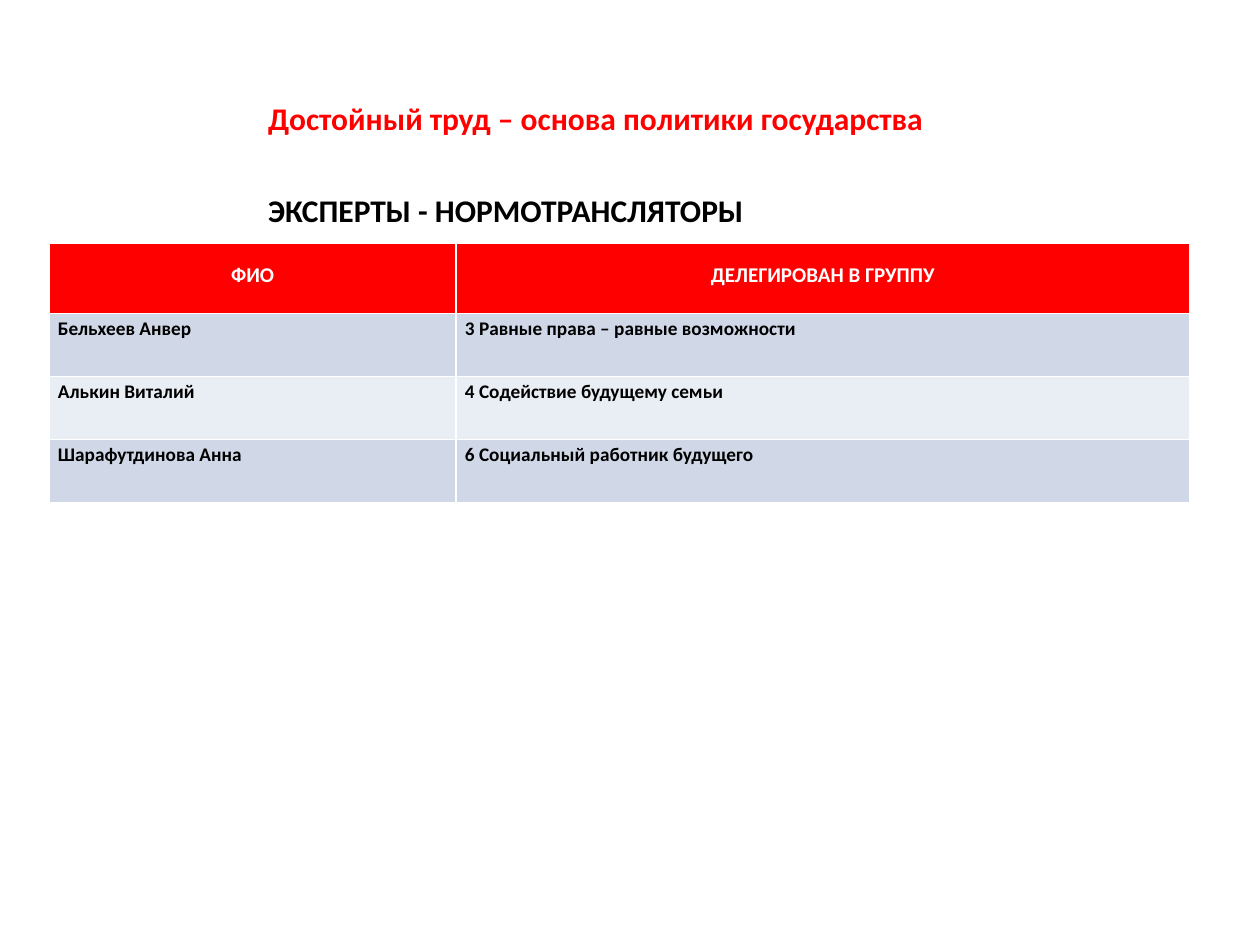
from pptx import Presentation
from pptx.dml.color import RGBColor
from pptx.enum.text import MSO_ANCHOR, PP_ALIGN
from pptx.util import Inches, Pt

CENTER, LEFT = PP_ALIGN.CENTER, PP_ALIGN.LEFT
TOP, MIDDLE = MSO_ANCHOR.TOP, MSO_ANCHOR.MIDDLE

MOTTO = "Достойный труд – основа политики государства"
HEADING = "ЭКСПЕРТЫ - НОРМОТРАНСЛЯТОРЫ"
COLUMNS = ("ФИО", "ДЕЛЕГИРОВАН В ГРУППУ")
EXPERTS = [
    ("Бельхеев Анвер", "3 Равные права – равные возможности"),
    ("Алькин Виталий", "4 Содействие будущему семьи"),
    ("Шарафутдинова Анна", "6 Социальный работник будущего"),
]

THEME = {
    "font": "Calibri",
    "accent": "FF0000",
    "dark": "000000",
    "light": "FFFFFF",
    "bands": ("D0D8E8", "E9EDF4"),
    "title_size": 18,
    "header_size": 12,
    "body_size": 11,
}

TABLE_LEFT, TABLE_TOP = 0.39, 1.93
COLUMN_WIDTHS = (3.23, 5.82)
HEADER_HEIGHT, EXPERT_HEIGHT = 0.56, 0.5


def write(frame, text, *, size, color, align=LEFT, spacing=1.0):
    paragraph = frame.paragraphs[0]
    paragraph.alignment = align
    paragraph.line_spacing = spacing
    run = paragraph.add_run()
    run.text = text
    run.font.name = THEME["font"]
    run.font.size = Pt(size)
    run.font.bold = True
    run.font.color.rgb = RGBColor.from_string(color)


def add_title(slide, text, box, color, anchor, wrap):
    frame = slide.shapes.add_textbox(*map(Inches, box)).text_frame
    frame.word_wrap = wrap
    frame.vertical_anchor = anchor
    write(frame, text, size=THEME["title_size"], color=color)


def fill_cell(cell, color):
    cell.fill.solid()
    cell.fill.fore_color.rgb = RGBColor.from_string(color)


def add_experts(slide):
    heights = [HEADER_HEIGHT] + [EXPERT_HEIGHT] * len(EXPERTS)
    table = slide.shapes.add_table(
        len(heights), len(COLUMNS), Inches(TABLE_LEFT), Inches(TABLE_TOP),
        Inches(sum(COLUMN_WIDTHS)), Inches(sum(heights)),
    ).table
    for column, width in zip(table.columns, COLUMN_WIDTHS):
        column.width = Inches(width)
    for row, height in zip(table.rows, heights):
        row.height = Inches(height)

    for index, label in enumerate(COLUMNS):
        cell = table.cell(0, index)
        fill_cell(cell, THEME["accent"])
        write(cell.text_frame, label, size=THEME["header_size"],
              color=THEME["light"], align=CENTER, spacing=1.5)

    for number, expert in enumerate(EXPERTS):
        for index, text in enumerate(expert):
            cell = table.cell(number + 1, index)
            fill_cell(cell, THEME["bands"][number % 2])
            cell.margin_left = cell.margin_right = Inches(0.07)
            cell.margin_top = cell.margin_bottom = 0
            write(cell.text_frame, text, size=THEME["body_size"],
                  color=THEME["dark"], spacing=1.15)


def main():
    deck = Presentation()
    deck.slide_width, deck.slide_height = Inches(10), Inches(7.5)
    slide = deck.slides.add_slide(deck.slide_layouts[6])
    add_title(slide, HEADING, (2.03, 1.47, 4.01, 0.4), THEME["dark"], TOP, False)
    add_title(slide, MOTTO, (2.03, 0.74, 7.15, 0.39), THEME["accent"], MIDDLE, True)
    add_experts(slide)
    deck.save("out.pptx")


if __name__ == "__main__":
    main()
